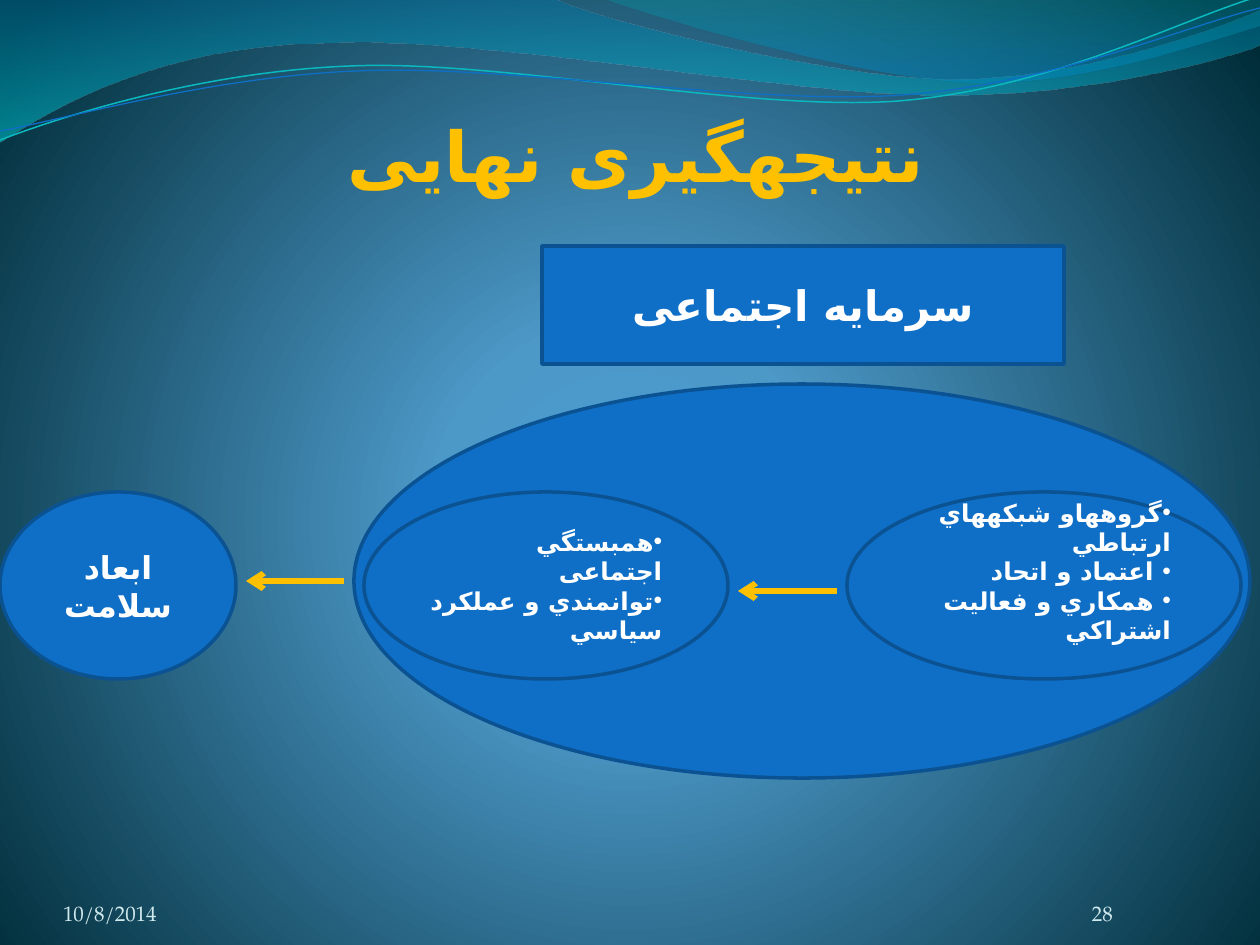
from dataclasses import dataclass

from lxml.etree import SubElement
from pptx import Presentation
from pptx.dml.color import RGBColor
from pptx.enum.shapes import MSO_CONNECTOR, MSO_SHAPE
from pptx.enum.text import MSO_ANCHOR, MSO_AUTO_SIZE, PP_ALIGN
from pptx.oxml.ns import qn
from pptx.util import Emu, Pt

EMU_PER_PX = 914400 / 126


@dataclass(frozen=True)
class Theme:
    blue: str = "0F6FC6"
    edge: str = "0B5292"
    gold: str = "FFC000"
    white: str = "FFFFFF"
    pale: str = "D1EAEE"
    aqua: str = "0AB8BF"
    body_font: str = "Calibri"
    persian_font: str = "DejaVu Sans"
    footer_font: str = "TeX Gyre Pagella"
    title_size: int = 40
    heading_size: int = 24
    outcome_size: int = 18
    list_size: int = 14
    footer_size: int = 12


THEME = Theme()


@dataclass(frozen=True)
class Stop:
    percent: int
    color: str
    opacity: int = 100


@dataclass(frozen=True)
class Wave:
    start: tuple[int, int]
    segments: tuple[tuple[int, ...], ...]
    stops: tuple[Stop, ...] = ()
    line: str = ""
    weight: float = 0


@dataclass(frozen=True)
class Node:
    box: tuple[int, int, int, int]
    kind: MSO_SHAPE = MSO_SHAPE.OVAL
    lines: tuple[str, ...] = ()
    size: int = THEME.list_size
    bulleted: bool = False
    bottom_inset: int = 6


@dataclass(frozen=True)
class Arrow:
    start_x: int
    end_x: int
    y: int


@dataclass(frozen=True)
class Footer:
    left: int
    width: int
    text: str


BACKDROP = (Stop(0, "4AA0D6"), Stop(25, "4C98C7"), Stop(100, "002C38"))
WAVES = (
    Wave((0, 0), ((554, -1), (600, 21, 837, 79, 955, 79), (1075, 79, 1207, 33, 1260, 11),
                  (1261, 45), (1239, 55, 1096, 96, 940, 95), (784, 95, 481, 35, 324, 43),
                  (163, 45, 58, 105, -1, 142), (0, 0)),
         stops=(Stop(0, "0074A1", 45), Stop(100, "00C6CF", 55))),
    Wave((604, -1), ((641, 14, 859, 78, 969, 82), (1079, 87, 1211, 40, 1260, 26), (1260, 0),
                     (604, -1)),
         stops=(Stop(0, "00A1A9", 30), Stop(80, "008BBF", 45))),
    Wave((0, 140), ((60, 117, 199, 72, 349, 66), (498, 59, 747, 112, 898, 101),
                    (1050, 89, 1182, 19, 1257, -3)), line=THEME.aqua, weight=0.85),
    Wave((0, 131), ((59, 121, 207, 77, 357, 71), (508, 64, 752, 106, 903, 95),
                    (1053, 84, 1186, 26, 1260, 8)), line=THEME.blue, weight=0.75),
)
NODES = (
    Node((354, 384, 896, 394)),
    Node((847, 492, 394, 187), bulleted=True, bottom_inset=35,
         lines=("گروههاو شبكههاي ارتباطي", " اعتماد و اتحاد", " همكاري و فعاليت اشتراكي")),
    Node((364, 492, 364, 187), bulleted=True,
         lines=("همبستگي اجتماعی", "توانمندي و عملكرد سياسي")),
    Node((0, 492, 236, 187), lines=("ابعاد سلامت",), size=THEME.outcome_size),
    Node((542, 246, 522, 118), MSO_SHAPE.RECTANGLE, ("سرمایه اجتماعی",), THEME.heading_size),
)
ARROWS = (Arrow(837, 738, 591), Arrow(344, 246, 581))
FOOTERS = (Footer(63, 294, "10/8/2014"), Footer(1092, 105, "28"))


def px(length: int) -> Emu:
    return Emu(round(length * EMU_PER_PX))


def rgb(color: str) -> RGBColor:
    return RGBColor.from_string(color)


def paint_gradient(fill, owner, stops: tuple[Stop, ...], radial: bool = False) -> None:
    fill.gradient()
    gradient = owner.xpath(".//a:gradFill")[0]
    for child in list(gradient):
        gradient.remove(child)
    stop_list = SubElement(gradient, qn("a:gsLst"))
    for stop in stops:
        mark = SubElement(stop_list, qn("a:gs"), pos=str(stop.percent * 1000))
        color = SubElement(mark, qn("a:srgbClr"), val=stop.color)
        if stop.opacity < 100:
            SubElement(color, qn("a:alpha"), val=str(stop.opacity * 1000))
    if radial:
        spread = SubElement(gradient, qn("a:path"), path="circle")
        SubElement(spread, qn("a:fillToRect"), l="10000", t="110000", r="10000", b="100000")
    else:
        SubElement(gradient, qn("a:lin"), ang="5400000", scaled="1")


def bend(ribbon, wave: Wave, corners: list[tuple[int, ...]]) -> None:
    left, top = (min(axis) for axis in zip(*corners))
    for edge, segment in zip(ribbon._element.xpath(".//a:lnTo"), wave.segments):
        if len(segment) == 2:
            continue
        outline = edge.getparent()
        curve = SubElement(outline, qn("a:cubicBezTo"))
        outline.replace(edge, curve)
        for x, y in zip(segment[::2], segment[1::2]):
            SubElement(curve, qn("a:pt"), x=str(x - left), y=str(y - top))


def draw_wave(slide, wave: Wave) -> None:
    corners = [wave.start, *(segment[-2:] for segment in wave.segments)]
    builder = slide.shapes.build_freeform(*wave.start, scale=EMU_PER_PX)
    builder.add_line_segments(corners[1:], close=bool(wave.stops))
    ribbon = builder.convert_to_shape()
    bend(ribbon, wave, corners)
    ribbon.shadow.inherit = False
    if wave.stops:
        paint_gradient(ribbon.fill, ribbon._element, wave.stops)
        ribbon.line.fill.background()
    else:
        ribbon.fill.background()
        ribbon.line.color.rgb = rgb(wave.line)
        ribbon.line.width = Pt(wave.weight)


def format_text(frame, size: int, color: str, align: PP_ALIGN, persian: bool = True,
                bulleted: bool = False, spacing: float | None = None) -> None:
    frame.word_wrap = True
    frame.auto_size = MSO_AUTO_SIZE.NONE
    for paragraph in frame.paragraphs:
        paragraph.alignment = align
        paragraph.line_spacing = spacing
        properties = paragraph._p.get_or_add_pPr()
        if persian:
            properties.set("rtl", "1")
        if bulleted:
            SubElement(properties, qn("a:buFont"), typeface="Arial")
            SubElement(properties, qn("a:buChar"), char="•")
        for run in paragraph.runs:
            run.font.name = THEME.body_font if persian else THEME.footer_font
            run.font.size = Pt(size)
            run.font.bold = persian
            run.font.color.rgb = rgb(color)
            if persian:
                SubElement(run.font._element, qn("a:cs"), typeface=THEME.persian_font)


def set_insets(frame, top: int = 0) -> None:
    frame.margin_left = frame.margin_right = frame.margin_bottom = 0
    frame.margin_top = px(top)
    frame.vertical_anchor = MSO_ANCHOR.BOTTOM


def draw_title(slide, text: str) -> None:
    title = slide.shapes.title
    slide.shapes._spTree.append(title._element)
    title.left, title.top, title.width, title.height = map(px, (69, 39, 1134, 158))
    title.text_frame.text = text
    set_insets(title.text_frame, top=6)
    format_text(title.text_frame, THEME.title_size, THEME.gold, PP_ALIGN.CENTER, spacing=1.5)


def draw_footer(slide, footer: Footer) -> None:
    frame = slide.shapes.add_textbox(*map(px, (footer.left, 876, footer.width, 50))).text_frame
    frame.text = footer.text
    set_insets(frame)
    format_text(frame, THEME.footer_size, THEME.pale, PP_ALIGN.JUSTIFY, persian=False, spacing=1.5)


def draw_node(slide, node: Node) -> None:
    concept = slide.shapes.add_shape(node.kind, *map(px, node.box))
    concept.shadow.inherit = False
    concept.fill.solid()
    concept.fill.fore_color.rgb = rgb(THEME.blue)
    concept.line.color.rgb = rgb(THEME.edge)
    concept.line.width = Pt(2)
    if node.lines:
        frame = concept.text_frame
        frame.text = "\n".join(node.lines)
        frame.vertical_anchor = MSO_ANCHOR.MIDDLE
        frame.margin_bottom = px(node.bottom_inset)
        align = PP_ALIGN.RIGHT if node.bulleted else PP_ALIGN.CENTER
        format_text(frame, node.size, THEME.white, align, bulleted=node.bulleted)


def draw_arrow(slide, arrow: Arrow) -> None:
    ends = map(px, (arrow.start_x, arrow.y, arrow.end_x, arrow.y))
    link = slide.shapes.add_connector(MSO_CONNECTOR.STRAIGHT, *ends)
    link.line.color.rgb = rgb(THEME.gold)
    link.line.width = Pt(3.25)
    SubElement(link.line._get_or_add_ln(), qn("a:tailEnd"), type="arrow")
    SubElement(link._element.spPr, qn("a:effectLst"))


def main() -> None:
    deck = Presentation()
    deck.slide_width, deck.slide_height = px(1260), px(945)
    slide = deck.slides.add_slide(deck.slide_layouts[5])
    paint_gradient(slide.background.fill, slide._element, BACKDROP, radial=True)
    for wave in WAVES:
        draw_wave(slide, wave)
    draw_title(slide, "نتیجهگیری نهایی")
    for footer in FOOTERS:
        draw_footer(slide, footer)
    for node in NODES:
        draw_node(slide, node)
    for arrow in ARROWS:
        draw_arrow(slide, arrow)
    deck.save("out.pptx")


if __name__ == "__main__":
    main()
